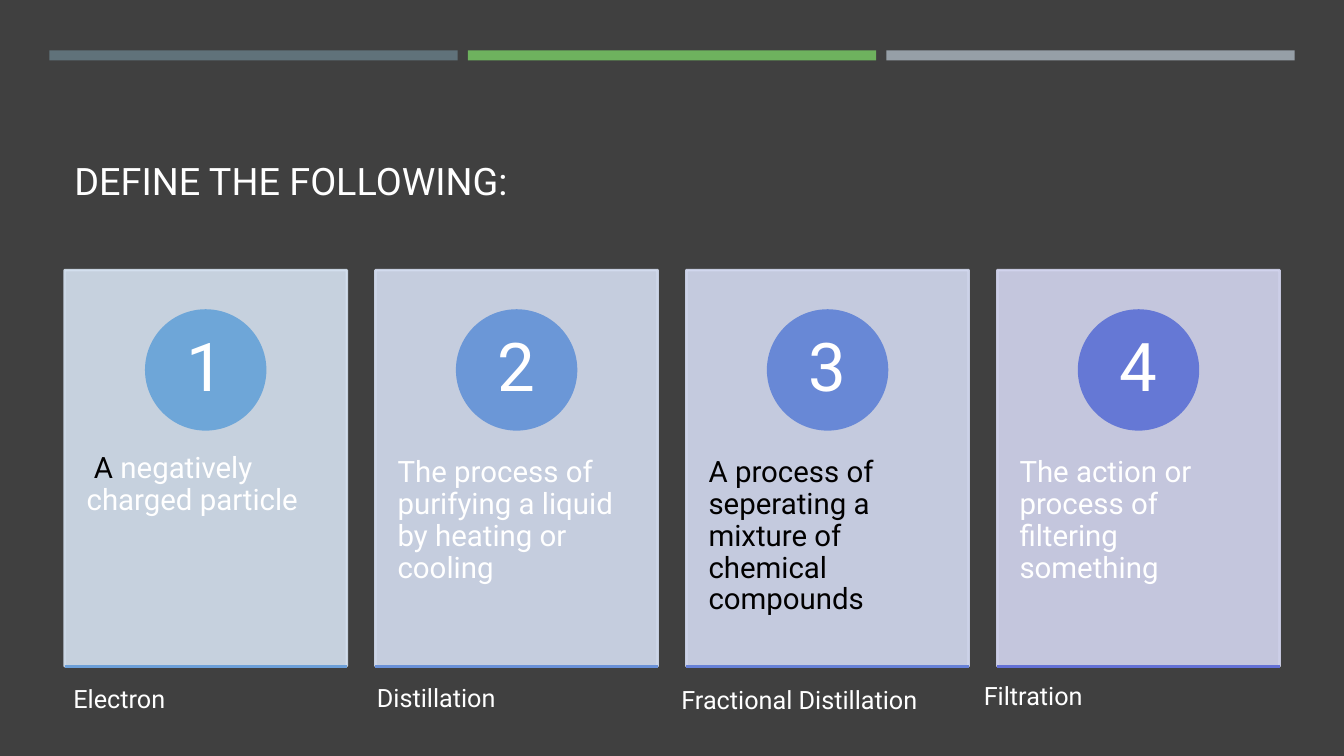
from dataclasses import dataclass

from lxml.etree import SubElement
from pptx import Presentation
from pptx.dml.color import RGBColor
from pptx.enum.shapes import MSO_CONNECTOR, MSO_SHAPE
from pptx.enum.text import MSO_ANCHOR, PP_ALIGN
from pptx.oxml.ns import qn
from pptx.util import Inches, Pt

FONT = "Roboto"
WHITE = "FFFFFF"
BLACK = "010000"
CARD_LEFT, CARD_TOP, CARD_WIDTH, CARD_HEIGHT = 0.64, 2.68, 2.8, 3.93
CARD_PITCH = 3.084
CIRCLE_SIZE = 1.18
NUMBER_SIZE = 0.83
BAR_LEFT, BAR_TOP, BAR_WIDTH, BAR_HEIGHT, BAR_PITCH = 0.49, 0.5, 4.05, 0.1, 4.15
BAR_COLORS = ["60727A", "6EB25E", "969FA7"]


@dataclass
class Span:
    text: str
    color: str = WHITE


@dataclass
class Card:
    definition: list[Span]
    fill: str
    circle: str
    edge: str
    term: str
    term_left: float
    term_top: float


CARDS = [
    Card([Span(" "), Span("A", BLACK), Span(" negatively charged particle")],
         "D5E1F0", "6EA6D8", "6C9FD8", "Electron", 0.63, 6.73),
    Card([Span("The process of purifying a liquid by heating or cooling")],
         "D4DDF0", "6B97D7", "6990D7", "Distillation", 3.64, 6.72),
    Card([Span("A process of seperating a mixture of chemical compounds", BLACK)],
         "D3D9F0", "6888D6", "6680D6", "Fractional Distillation", 6.66, 6.74),
    Card([Span("The action or process of filtering something")],
         "D3D5EF", "6578D5", "6370D5", "Filtration", 9.66, 6.7),
]


def rgb(value: str) -> RGBColor:
    return RGBColor.from_string(value)


def set_opacity(fill, percent: int) -> None:
    for color in fill._xPr.iter(qn("a:srgbClr")):
        SubElement(color, qn("a:alpha"), val=str(percent * 1000))


def add_box(page, kind, left: float, top: float, width: float, height: float,
            color: str, line_width: float = 0, opacity: int = 100):
    box = page.shapes.add_shape(kind, Inches(left), Inches(top), Inches(width), Inches(height))
    box.shadow.inherit = False
    box.fill.solid()
    box.fill.fore_color.rgb = rgb(color)
    if line_width:
        box.line.color.rgb = rgb(color)
        box.line.width = Pt(line_width)
    else:
        box.line.fill.background()
    if opacity < 100:
        set_opacity(box.fill, opacity)
    return box


def add_text(page, spans: list[Span], left: float, top: float, width: float, height: float, *,
             size: float, anchor=MSO_ANCHOR.TOP, align=PP_ALIGN.LEFT, spacing: float = 1.0,
             inset_x: float = 0.1, inset_y: float = 0.05) -> None:
    box = page.shapes.add_textbox(Inches(left), Inches(top), Inches(width), Inches(height))
    frame = box.text_frame
    frame.word_wrap = True
    frame.vertical_anchor = anchor
    frame.margin_left = frame.margin_right = Inches(inset_x)
    frame.margin_top = frame.margin_bottom = Inches(inset_y)
    para = frame.paragraphs[0]
    para.alignment = align
    para.line_spacing = spacing
    for span in spans:
        run = para.add_run()
        run.text = span.text
        run.font.name = FONT
        run.font.size = Pt(size)
        run.font.color.rgb = rgb(span.color)


def add_edge(page, left: float, top: float, width: float, color: str) -> None:
    edge = page.shapes.add_connector(MSO_CONNECTOR.STRAIGHT, Inches(left), Inches(top),
                                     Inches(left + width), Inches(top))
    edge.line.color.rgb = rgb(color)
    edge.line.width = Pt(1.75)
    SubElement(edge._element.spPr, qn("a:effectLst"))


def add_card(page, index: int, card: Card) -> None:
    left = CARD_LEFT + index * CARD_PITCH
    center = left + CARD_WIDTH / 2
    add_box(page, MSO_SHAPE.RECTANGLE, left, CARD_TOP, CARD_WIDTH, CARD_HEIGHT,
            card.fill, line_width=1.75, opacity=90)
    add_text(page, card.definition, left, 4.18, CARD_WIDTH, 2.36, size=21, spacing=0.9,
             inset_x=0.22, inset_y=0.36)
    add_box(page, MSO_SHAPE.OVAL, center - CIRCLE_SIZE / 2, 3.08, CIRCLE_SIZE, CIRCLE_SIZE,
            card.circle, line_width=1.75)
    add_text(page, [Span(str(index + 1))], center - NUMBER_SIZE / 2, 3.25,
             NUMBER_SIZE, NUMBER_SIZE, size=48, anchor=MSO_ANCHOR.MIDDLE,
             align=PP_ALIGN.CENTER, spacing=0.9, inset_x=0.09, inset_y=0.01)
    add_edge(page, left, CARD_TOP + CARD_HEIGHT, CARD_WIDTH, card.edge)
    add_text(page, [Span(card.term)], card.term_left, card.term_top, 3, 0.4, size=18)


def main() -> None:
    deck = Presentation()
    deck.slide_width = Inches(13.33)
    deck.slide_height = Inches(7.5)
    page = deck.slides.add_slide(deck.slide_layouts[6])
    page.background.fill.solid()
    page.background.fill.fore_color.rgb = rgb("404040")

    for index, color in enumerate(BAR_COLORS):
        add_box(page, MSO_SHAPE.RECTANGLE, BAR_LEFT + index * BAR_PITCH, BAR_TOP,
                BAR_WIDTH, BAR_HEIGHT, color)
    add_text(page, [Span("DEFINE THE FOLLOWING:")], 0.64, 0.77, 12.06, 1.3, size=27,
             anchor=MSO_ANCHOR.BOTTOM, spacing=0.9)
    for index, card in enumerate(CARDS):
        add_card(page, index, card)

    deck.save("out.pptx")


if __name__ == "__main__":
    main()
